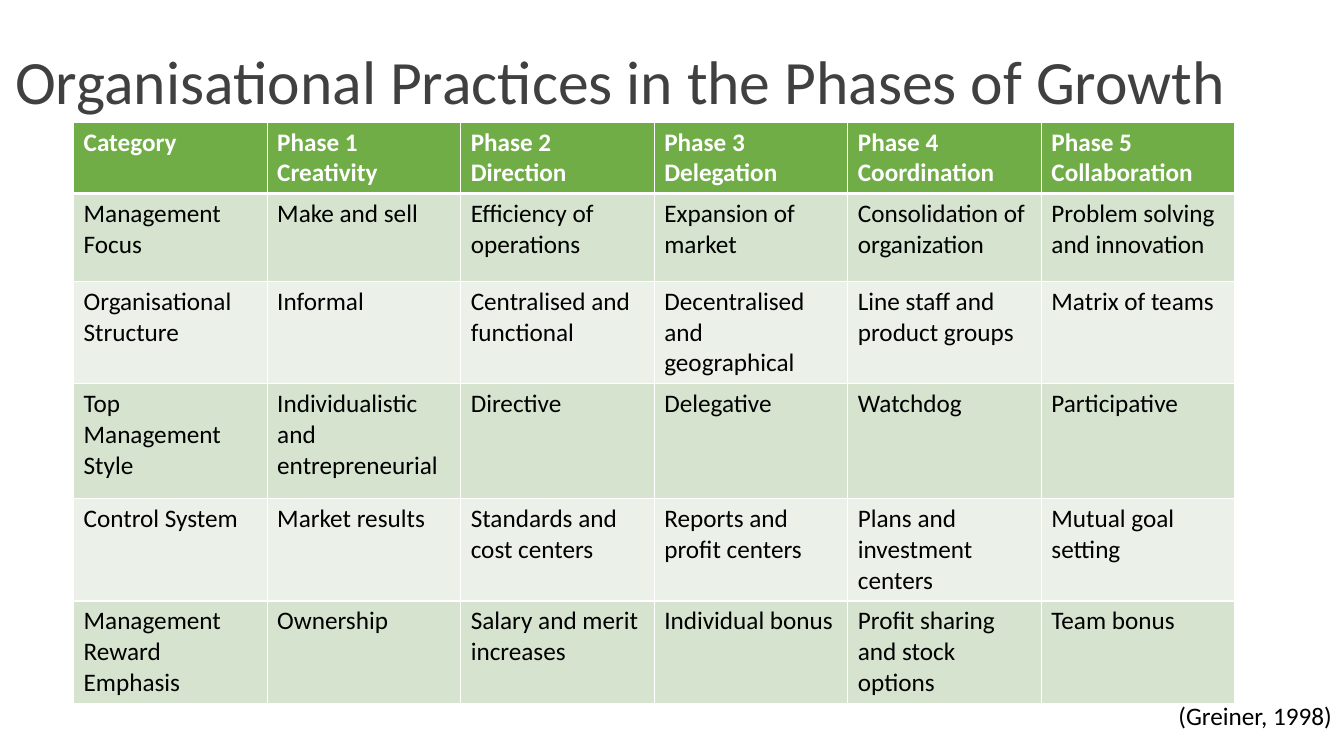
from lxml.etree import SubElement
from pptx import Presentation
from pptx.dml.color import RGBColor
from pptx.enum.text import MSO_ANCHOR as Anchor, MSO_AUTO_SIZE as AutoSize, PP_ALIGN as Align
from pptx.oxml.ns import qn
from pptx.util import Emu, Pt

PX = 9144  # EMU per px, 100 px to the inch
FONT = "Calibri"
COLORS = {
    "title": "404041",
    "text": "000000",
    "white": "FFFFFF",
    "header": "70AD47",
    "dark_band": "D5E3CF",
    "light_band": "EBF1E9",
}
COLUMN_WIDTH = 192
ROW_HEIGHTS = [67, 87, 95, 114, 95, 95]
PRACTICES = [
    ["Category", "Phase 1\nCreativity", "Phase 2\nDirection", "Phase 3 Delegation",
     "Phase 4\nCoordination", "Phase 5\nCollaboration"],
    ["Management Focus", "Make and sell", "Efficiency of operations", "Expansion of market",
     "Consolidation of organization", "Problem solving and innovation"],
    ["Organisational Structure", "Informal", "Centralised and functional",
     "Decentralised and geographical", "Line staff and product groups", "Matrix of teams"],
    ["Top Management Style", "Individualistic and entrepreneurial", "Directive", "Delegative",
     "Watchdog", "Participative"],
    ["Control System", "Market results", "Standards and cost centers",
     "Reports and profit centers", "Plans and investment centers", "Mutual goal setting"],
    ["Management Reward Emphasis", "Ownership", "Salary and merit increases",
     "Individual bonus", "Profit sharing and stock options", "Team bonus"],
]


def px(*lengths):
    return [Emu(length * PX) for length in lengths]


def rgb(name):
    return RGBColor.from_string(COLORS[name])


def style_text(frame, size, color, bold=False):
    for para in frame.paragraphs:
        para.alignment = Align.LEFT
        font = para.font
        font.name, font.size, font.bold = FONT, Pt(size), bold
        font.color.rgb = rgb(color)


def add_title(page, text):
    title = page.shapes.title
    title.left, title.top, title.width, title.height = px(5, 11, 1242, 145)
    frame = title.text_frame
    frame.text = text
    frame.word_wrap = True
    frame.auto_size = AutoSize.NONE
    frame.vertical_anchor = Anchor.MIDDLE
    frame.paragraphs[0].line_spacing = 0.9
    style_text(frame, 44, "title")


def set_borders(cell, top, bottom):
    properties = cell._tc.get_or_add_tcPr()
    for side, width in (("L", 1), ("R", 1), ("T", top), ("B", bottom)):
        line = SubElement(properties, qn(f"a:ln{side}"), w=str(Pt(width)))
        fill = SubElement(line, qn("a:solidFill"))
        SubElement(fill, qn("a:srgbClr"), val=COLORS["white"])


def fill_cell(cell, text, row):
    is_header = row == 0
    cell.text = text
    style_text(cell.text_frame, 18, "white" if is_header else "text", is_header)
    # The rule between header and body is thicker than the others
    set_borders(cell, top=3 if row == 1 else 1, bottom=3 if is_header else 1)
    band = "dark_band" if row % 2 else "light_band"
    cell.fill.solid()
    cell.fill.fore_color.rgb = rgb("header" if is_header else band)


def add_practices_table(page, left, top):
    columns = len(PRACTICES[0])
    area = px(left, top, COLUMN_WIDTH * columns, sum(ROW_HEIGHTS))
    table = page.shapes.add_table(len(PRACTICES), columns, *area).table
    for column in table.columns:
        column.width = Emu(COLUMN_WIDTH * PX)
    for row, texts in enumerate(PRACTICES):
        table.rows[row].height = Emu(ROW_HEIGHTS[row] * PX)
        for column, text in enumerate(texts):
            fill_cell(table.cell(row, column), text, row)


def add_citation(page, text):
    frame = page.shapes.add_textbox(*px(1159, 690, 174, 40)).text_frame
    frame.text = text
    frame.word_wrap = False
    frame.auto_size = AutoSize.SHAPE_TO_FIT_TEXT
    style_text(frame, 18, "text")


def main():
    deck = Presentation()
    deck.slide_width, deck.slide_height = px(1333, 750)
    page = deck.slides.add_slide(deck.slide_layouts.get_by_name("Title Only"))
    add_title(page, "Organisational Practices in the Phases of Growth")
    add_practices_table(page, 73, 121)
    add_citation(page, "(Greiner, 1998)")
    deck.save("out.pptx")


if __name__ == "__main__":
    main()
